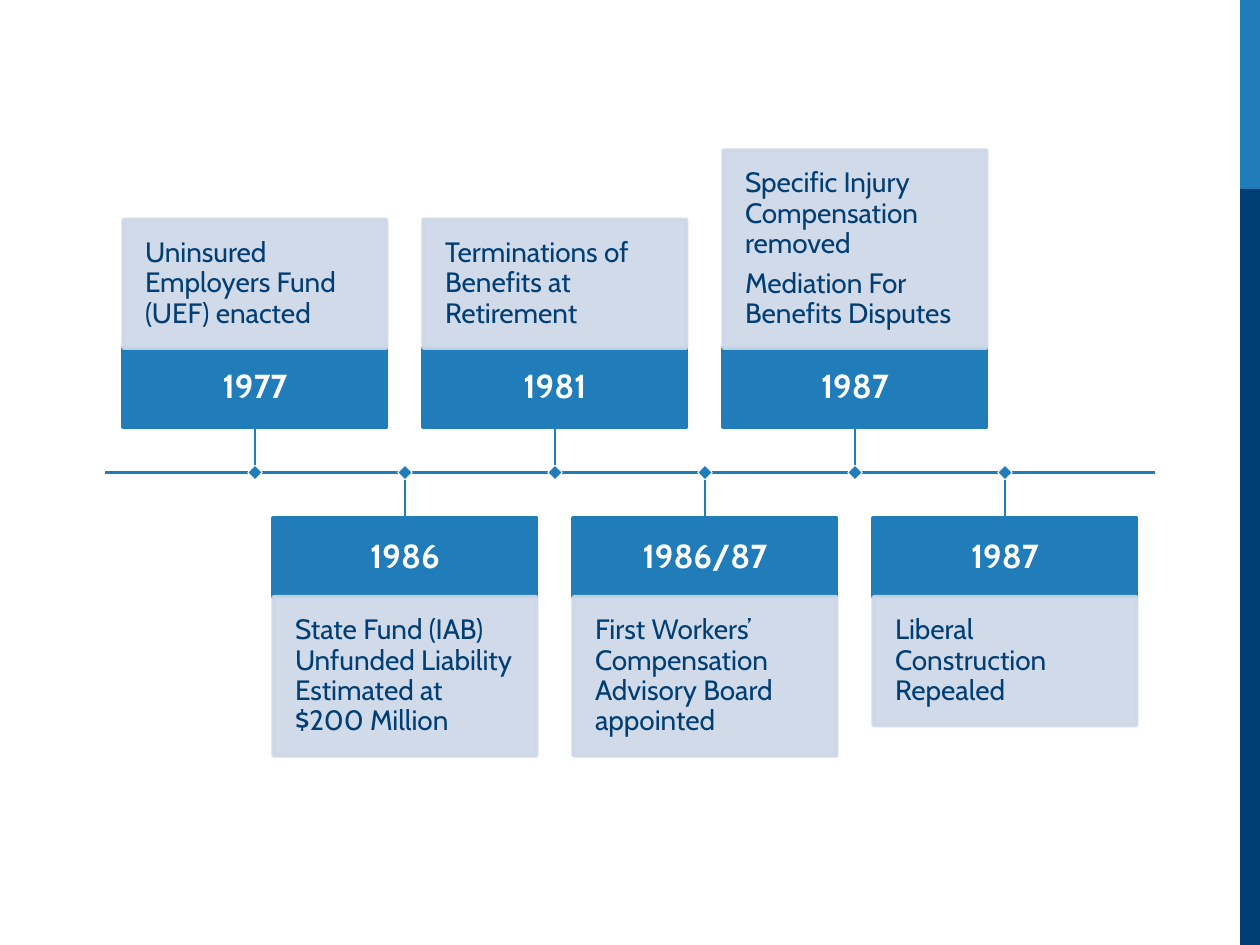
"""Build a timeline slide of workers' compensation events from 1977 to 1987."""
from lxml.etree import SubElement
from pptx import Presentation
from pptx.dml.color import RGBColor
from pptx.enum.shapes import MSO_CONNECTOR as CONN, MSO_SHAPE as SHAPE
from pptx.enum.text import MSO_ANCHOR as ANCHOR, PP_ALIGN as ALIGN
from pptx.oxml.ns import qn
from pptx.util import Pt

EVENTS = [
    ("1977", ["Uninsured Employers Fund (UEF) enacted"], 73.4),
    ("1986", ["State Fund (IAB) Unfunded Liability Estimated at $200 Million"], 90.7),
    ("1981", ["Terminations of Benefits at Retirement"], 73.4),
    ("1986/87", ["First Workers’ Compensation Advisory Board appointed"], 90.7),
    ("1987", ["Specific Injury Compensation removed",
              "Mediation For Benefits Disputes"], 113),
    ("1987", ["Liberal Construction Repealed"], 73.4),
]

BLUE = RGBColor(0x21, 0x7C, 0xBA)
NAVY = RGBColor(0x00, 0x3E, 0x74)
PALE = RGBColor(0xCD, 0xD7, 0xE7)
WHITE = RGBColor(0xFF, 0xFF, 0xFF)
FONT = "Cabin"

SLIDE_W, SLIDE_H = 720, 540
BAND_X, BAND_SPLIT = 708.7, 108
AXIS_LEFT, AXIS_RIGHT, AXIS_Y = 60, 660, 270
STEP = (AXIS_RIGHT - AXIS_LEFT) / (len(EVENTS) + 1)
CARD_W, YEAR_H, STEM, MARKER = 150.4, 44.9, 26.2, 5.9


def add_rect(s, x, y, w, h, fill, line=None, line_w=2.25):
    sp = s.shapes.add_shape(SHAPE.RECTANGLE, Pt(x), Pt(y), Pt(w), Pt(h))
    sp.shadow.inherit = False
    sp.fill.solid()
    sp.fill.fore_color.rgb = fill
    if line is None:
        sp.line.fill.background()
    else:
        sp.line.color.rgb = line
        sp.line.width = Pt(line_w)
    return sp


def add_line(s, x1, y1, x2, y2, width):
    line = s.shapes.add_connector(CONN.STRAIGHT, Pt(x1), Pt(y1), Pt(x2), Pt(y2))
    line.line.color.rgb = BLUE
    line.line.width = Pt(width)
    SubElement(line._element.spPr, qn("a:effectLst"))


def set_opacity(sp, percent):
    for clr in sp._element.spPr.iter(qn("a:srgbClr")):
        SubElement(clr, qn("a:alpha")).set("val", str(percent * 1000))


def add_text(sp, texts, size, color, align, inset, bold=False):
    tf = sp.text_frame
    tf.word_wrap = True
    tf.vertical_anchor = ANCHOR.MIDDLE
    tf.margin_left = tf.margin_right = tf.margin_top = tf.margin_bottom = Pt(inset)
    for i, text in enumerate(texts):
        p = tf.add_paragraph() if i else tf.paragraphs[0]
        p.alignment = align
        p.line_spacing = 0.9
        p.space_after = Pt(0.35 * size)
        r = p.add_run()
        r.text = text
        r.font.name = FONT
        r.font.size = Pt(size)
        r.font.bold = bold
        r.font.color.rgb = color


def add_event(s, x, above, year, details, detail_h):
    if above:
        year_y = AXIS_Y - STEM - YEAR_H
        detail_y = year_y - detail_h
        stem_end = AXIS_Y - STEM
    else:
        year_y = stem_end = AXIS_Y + STEM
        detail_y = year_y + YEAR_H
    left = x - CARD_W / 2
    sp = add_rect(s, left, year_y, CARD_W, YEAR_H, BLUE, BLUE)
    add_text(sp, [year], 19, WHITE, ALIGN.CENTER, 8, bold=True)
    sp = add_rect(s, left, detail_y, CARD_W, detail_h, PALE, PALE)
    set_opacity(sp, 90)
    add_text(sp, details, 16, NAVY, ALIGN.LEFT, 12.4)
    add_line(s, x, stem_end, x, AXIS_Y, 1)
    marker = add_rect(s, x - MARKER / 2, AXIS_Y - MARKER / 2, MARKER, MARKER,
                      BLUE, WHITE, 0.5)
    marker.rotation = 45


def main():
    prs = Presentation()
    prs.slide_width, prs.slide_height = Pt(SLIDE_W), Pt(SLIDE_H)
    s = prs.slides.add_slide(prs.slide_layouts[6])
    band_w = SLIDE_W - BAND_X
    add_rect(s, BAND_X, 0, band_w, BAND_SPLIT, BLUE)
    add_rect(s, BAND_X, BAND_SPLIT, band_w, SLIDE_H - BAND_SPLIT, NAVY)
    add_line(s, AXIS_LEFT, AXIS_Y, AXIS_RIGHT, AXIS_Y, 2.25)
    for i, (year, details, detail_h) in enumerate(EVENTS):
        add_event(s, AXIS_LEFT + STEP * (i + 1), i % 2 == 0, year, details, detail_h)
    prs.save("out.pptx")


if __name__ == "__main__":
    main()
